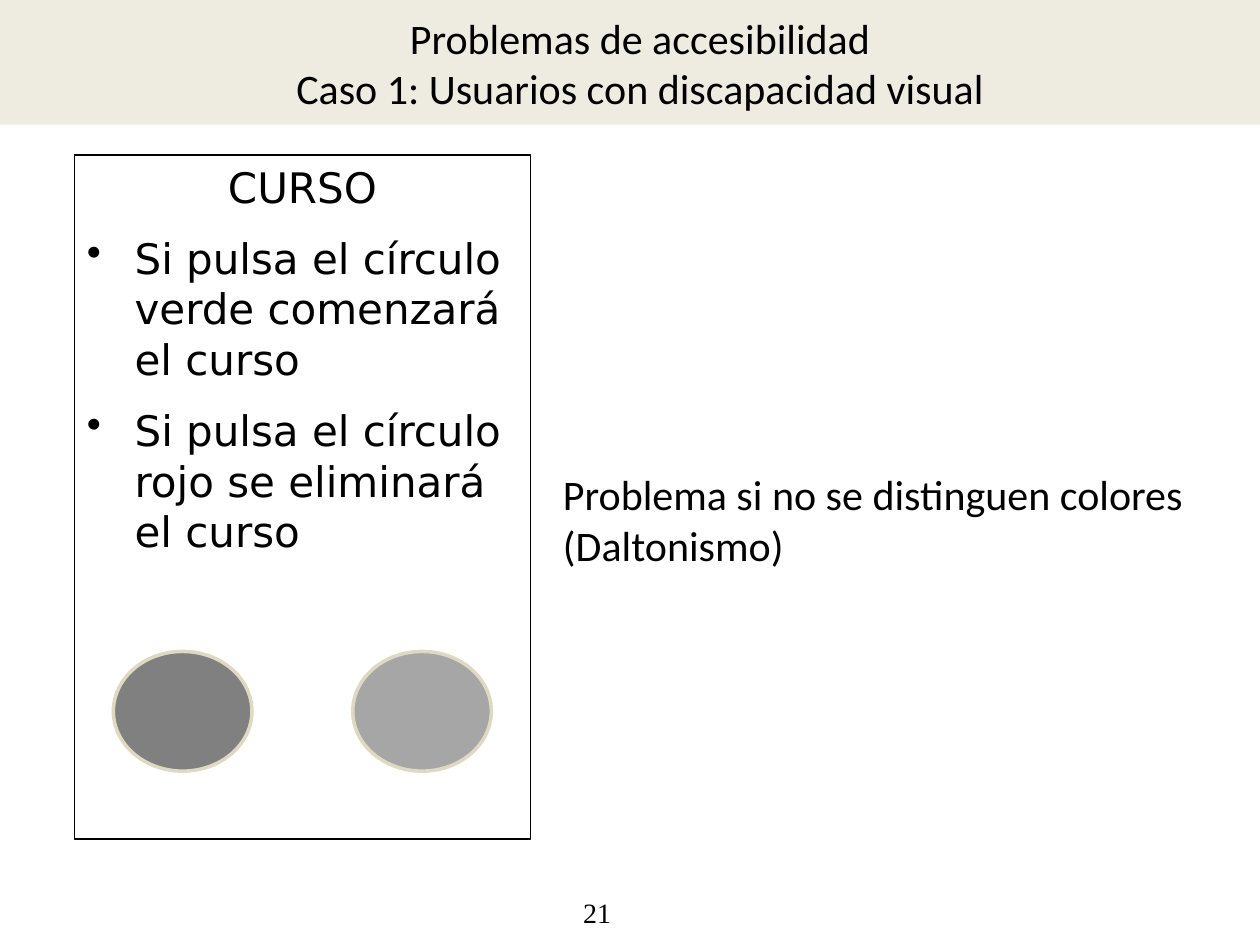
"""Builds the slide on accessibility problems for users with visual impairment."""
import pptx
import pptx.dml.color
import pptx.enum.shapes
import pptx.enum.text
import pptx.oxml.ns
import pptx.util
from lxml import etree

Inches = pptx.util.Inches
Pt = pptx.util.Pt
ALIGN = pptx.enum.text.PP_ALIGN
ANCHOR = pptx.enum.text.MSO_ANCHOR
SHAPES = pptx.enum.shapes.MSO_SHAPE


def color(hex_value):
    """Return the colour for a hex string."""
    return pptx.dml.color.RGBColor.from_string(hex_value)


def add_figure(slide, preset, box, fill=None, line=None, width=0.75):
    """Add a preset shape without shadow and return it."""
    figure = slide.shapes.add_shape(preset, *map(Inches, box))
    figure.shadow.inherit = False
    if fill:
        figure.fill.solid()
        figure.fill.fore_color.rgb = color(fill)
    else:
        figure.fill.background()
    if line:
        figure.line.color.rgb = color(line)
        figure.line.width = Pt(width)
    else:
        figure.line.fill.background()
    return figure


def add_label(slide, box, lines, font, size, wrap=False):
    """Add a text box with one paragraph per line."""
    frame = slide.shapes.add_textbox(*map(Inches, box)).text_frame
    frame.word_wrap = wrap
    write_paragraphs(frame, lines, font, size)


def write_paragraphs(frame, lines, font, size, align=ALIGN.LEFT):
    """Write each line as a paragraph, turning newlines into line breaks."""
    for index, line in enumerate(lines):
        paragraph = frame.paragraphs[0] if index == 0 else frame.add_paragraph()
        paragraph.alignment = align
        for part_index, part in enumerate(line.split("\n")):
            if part_index:
                paragraph.add_line_break()
            run = paragraph.add_run()
            run.text = part
            run.font.name = font
            run.font.size = Pt(size)
            run.font.color.rgb = color("000000")


def add_bullet(paragraph, indent):
    """Give a paragraph a round bullet with a hanging indent."""
    properties = paragraph._p.get_or_add_pPr()
    properties.set("marL", str(Inches(indent)))
    properties.set("indent", str(-Inches(indent)))
    bullet = etree.SubElement(properties, pptx.oxml.ns.qn("a:buChar"))
    bullet.set("char", "•")


def add_title_band(slide, title):
    """Add the shaded title band across the top."""
    frame = add_figure(slide, SHAPES.RECTANGLE, (0, 0, 10, 0.99), fill="EEECE1").text_frame
    frame.word_wrap = True
    frame.vertical_anchor = ANCHOR.MIDDLE
    frame.margin_left, frame.margin_right = Inches(0.55), Inches(0.39)
    write_paragraphs(frame, [title], "Calibri", 24, ALIGN.CENTER)


def add_course_panel(slide, heading, instructions):
    """Add the outlined course panel with its heading and bullets."""
    frame = add_figure(slide, SHAPES.RECTANGLE, (0.59, 1.23, 3.62, 5.43), line="000000").text_frame
    frame.word_wrap = True
    frame.vertical_anchor = ANCHOR.TOP
    write_paragraphs(frame, [heading, *instructions], "DejaVu Sans", 24)
    frame.paragraphs[0].alignment = ALIGN.CENTER
    for instruction in frame.paragraphs[1:]:
        instruction.space_before = Pt(12)
        add_bullet(instruction, 0.38)


def main():
    """Build and save the slide."""
    deck = pptx.Presentation()
    deck.slide_width, deck.slide_height = Inches(10), Inches(7.5)
    slide = deck.slides.add_slide(deck.slide_layouts[6])
    add_label(slide, (4.53, 7.06, 0.67, 0.37), ["21"], "Times New Roman", 16, wrap=True)
    add_title_band(slide, "Problemas de accesibilidad\nCaso 1: Usuarios con discapacidad visual")
    add_course_panel(slide, "CURSO", [
        "Si pulsa el círculo verde comenzará el curso",
        "Si pulsa el círculo rojo se eliminará el curso",
    ])
    for left, gray in ((0.9, "808080"), (2.8, "A6A6A6")):
        add_figure(slide, SHAPES.OVAL, (left, 5.17, 1.1, 0.95), gray, "DDD9C3", 2)
    add_label(slide, (4.37, 3.67, 5.17, 0.91),
              ["Problema si no se distinguen colores", "(Daltonismo)"], "Calibri", 24)
    deck.save("out.pptx")


if __name__ == "__main__":
    main()
